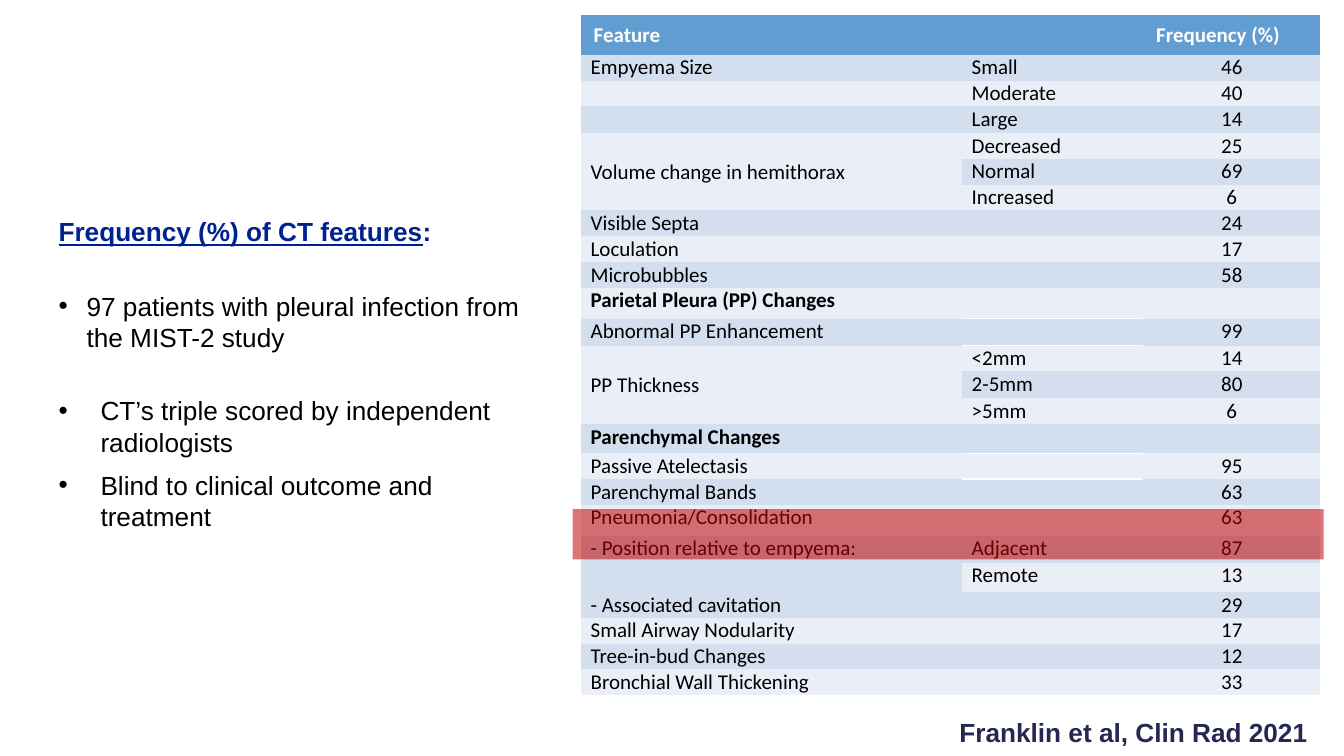
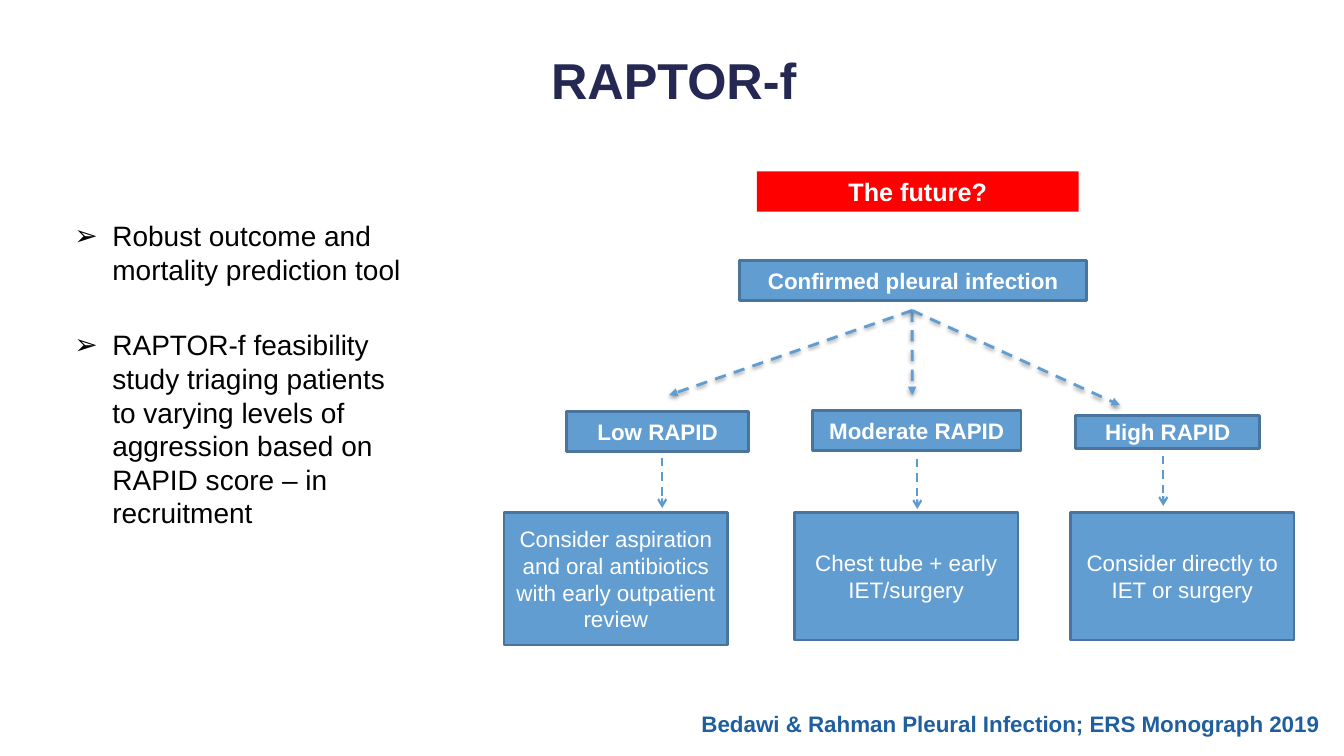
from dataclasses import dataclass

from lxml import etree
from pptx import Presentation
from pptx.dml.color import RGBColor
from pptx.enum.dml import MSO_LINE
from pptx.enum.shapes import MSO_CONNECTOR, MSO_SHAPE
from pptx.enum.text import MSO_ANCHOR, MSO_AUTO_SIZE, PP_ALIGN
from pptx.oxml.ns import qn
from pptx.util import Pt

LEFT, CENTER = PP_ALIGN.LEFT, PP_ALIGN.CENTER
TOP, MIDDLE = MSO_ANCHOR.TOP, MSO_ANCHOR.MIDDLE
RECTANGLE, STRAIGHT, DASH = MSO_SHAPE.RECTANGLE, MSO_CONNECTOR.STRAIGHT, MSO_LINE.DASH
TITLE_AND_CONTENT = 1
PLAIN_TABLE = "{2D5ABB26-0587-4C30-8999-92F81FD0307C}"


@dataclass(frozen=True)
class Theme:
    font: str = "Arial"
    table_font: str = "Calibri"
    black: str = "000000"
    white: str = "FFFFFF"
    navy: str = "242852"
    heading: str = "002190"
    citation: str = "1F5FA0"
    blue: str = "629DD1"
    edge: str = "49749B"
    thin_arrow: str = "5D9ACF"
    alert: str = "FF0000"
    highlight: str = "C00000"
    bands: tuple = ("EAEFF7", "D3DFEE")
    title: float = 36
    text: float = 20
    small_text: float = 18.7
    banner: float = 18
    box: float = 16
    table: float = 15


THEME = Theme()

# Feature, detail, frequency
FEATURES = [
    ("Feature", "", "Frequency (%)"),
    ("Empyema Size", "Small", "46"),
    ("", "Moderate", "40"),
    ("", "Large", "14"),
    ("Volume change in hemithorax", "Decreased", "25"),
    ("", "Normal", "69"),
    ("", "Increased", "6"),
    ("Visible Septa", "", "24"),
    ("Loculation", "", "17"),
    ("Microbubbles", "", "58"),
    ("Parietal Pleura (PP) Changes", "", ""),
    ("Abnormal PP Enhancement", "", "99"),
    ("PP Thickness", "<2mm", "14"),
    ("", "2-5mm", "80"),
    ("", ">5mm", "6"),
    ("Parenchymal Changes", "", ""),
    ("Passive Atelectasis", "", "95"),
    ("Parenchymal Bands", "", "63"),
    ("Pneumonia/Consolidation", "", "63"),
    ("- Position relative to empyema:", "Adjacent", "87"),
    ("", "Remote", "13"),
    ("- Associated cavitation", "", "29"),
    ("Small Airway Nodularity", "", "17"),
    ("Tree-in-bud Changes", "", "12"),
    ("Bronchial Wall Thickening", "", "33"),
]
ROW_HEIGHT = 18.4
TALL_ROWS = {0: 28, 3: 19.2, 10: 22.2, 11: 19.2, 13: 19.2,
             15: 20.9, 18: 22.2, 19: 19.2, 20: 20.9}
SECTION_ROWS = (10, 15)
ROW_SPANS = {4: 6, 12: 14, 19: 20}
MIDDLE_ROWS = (0, 4, 12)

# Risk label, its place, arrow tip, treatment, its place, start of the arrow to it
BRANCHES = [
    ("Low RAPID", (404.6, 293.8, 130.3, 28.8), (478, 282.2),
     "Consider aspiration and oral antibiotics with early outpatient review",
     (360, 365.8, 159.8, 95), (473, 326.9)),
    ("Moderate RAPID", (580.3, 293, 149, 28.8), (651.6, 282.2),
     "Chest tube + early IET/surgery",
     (567.4, 365.8, 159.8, 91.4), (655.2, 327.6)),
    ("High RAPID", (768.2, 296.6, 131.8, 23.8), (800, 289.4),
     "Consider directly to IET or surgery",
     (764.6, 365.8, 159.8, 91.4), (830.9, 325.4)),
]
FORK = (651.5, 221.8)
ARROW_LENGTH = 36


def child(parent, tag, **attributes):
    return etree.SubElement(parent, qn(tag), **attributes)


def color(value):
    return RGBColor.from_string(value)


def paint(target, value):
    target.fill.solid()
    target.fill.fore_color.rgb = color(value)


def write(paragraph, text, size=THEME.text, ink=THEME.black, bold=False,
          underline=None, align=LEFT, font=THEME.font):
    """Append a formatted span to the paragraph."""
    paragraph.alignment = align
    if not text:
        child(paragraph._p, "a:endParaRPr", sz=str(round(size * 100)))
        return
    span = paragraph.add_run()
    span.text = text
    span.font.name = font
    span.font.size = Pt(size)
    span.font.bold = bold
    span.font.underline = underline
    span.font.color.rgb = color(ink)


def bullet(paragraph, mark, hang):
    properties = paragraph._p.get_or_add_pPr()
    properties.set("marL", str(Pt(hang)))
    properties.set("indent", str(-Pt(hang)))
    child(properties, "a:buFont", typeface=THEME.font)
    child(properties, "a:buChar", char=mark)


class Deck:
    def __init__(self):
        self.presentation = Presentation()
        self.presentation.slide_width = Pt(960)
        self.presentation.slide_height = Pt(540)
        self.page = None

    def add_page(self):
        layout = self.presentation.slide_layouts[TITLE_AND_CONTENT]
        self.page = self.presentation.slides.add_slide(layout)

    def frame(self, box, anchor=TOP):
        """Prepare the text frame of a box and return it."""
        frame = box.text_frame
        frame.word_wrap = True
        frame.auto_size = MSO_AUTO_SIZE.NONE
        frame.vertical_anchor = anchor
        return frame

    def place(self, box, place):
        box.left, box.top, box.width, box.height = map(Pt, place)

    def title(self, place, spans, **style):
        """Fill the title with (text, underline) spans."""
        box = self.page.shapes.title
        self.place(box, place)
        paragraph = self.frame(box).paragraphs[0]
        for text, underline in spans:
            write(paragraph, text, bold=True, underline=underline, **style)

    def bullets(self, place, items, mark, size):
        """Fill the body with (text, space before, hanging indent) items."""
        box = self.page.placeholders[1]
        self.place(box, place)
        frame = self.frame(box)
        for index, (text, before, hang) in enumerate(items):
            paragraph = frame.add_paragraph() if index else frame.paragraphs[0]
            paragraph.space_before = Pt(before)
            bullet(paragraph, mark, hang)
            write(paragraph, text, size=size)

    def citation(self, place, text, **style):
        box = self.page.shapes.add_textbox(*map(Pt, place))
        write(self.frame(box).paragraphs[0], text, bold=True, **style)

    def box(self, place, text="", fill=THEME.blue, edge=None, anchor=MIDDLE,
            size=THEME.box, bold=False):
        box = self.page.shapes.add_shape(RECTANGLE, *map(Pt, place))
        box.shadow.inherit = False
        paint(box, fill)
        if edge:
            box.line.color.rgb = color(edge)
            box.line.width = Pt(2)
        else:
            box.line.fill.background()
        if text:
            write(self.frame(box, anchor).paragraphs[0], text, size=size,
                  ink=THEME.white, bold=bold, align=CENTER)
        return box

    def highlight(self, place, opacity):
        box = self.box(place, fill=THEME.highlight)
        tint = box._element.spPr.find(qn("a:solidFill"))[0]
        child(tint, "a:alpha", val=str(opacity * 1000))

    def arrow(self, start, end, ink, width, head, shadow=False):
        line = self.page.shapes.add_connector(STRAIGHT, *map(Pt, start + end))
        line.line.color.rgb = color(ink)
        line.line.width = Pt(width)
        line.line.dash_style = DASH
        properties = line._element.spPr
        child(properties.find(qn("a:ln")), "a:tailEnd", type=head)
        effects = child(properties, "a:effectLst")
        if shadow:
            cast = child(effects, "a:outerShdw", blurRad=str(Pt(3.1)),
                         dist=str(Pt(1.6)), dir="5400000", rotWithShape="0")
            shade = child(cast, "a:srgbClr", val=THEME.black)
            child(shade, "a:alpha", val="38000")

    def cell(self, cell, text, row, column):
        header = row == 0
        cell.margin_left = cell.margin_right = Pt(9.4 if header else 7.2)
        cell.margin_top = cell.margin_bottom = Pt(5 if header else 0)
        centred = row in MIDDLE_ROWS and (header or column == 0)
        cell.vertical_anchor = MIDDLE if centred else TOP
        write(cell.text_frame.paragraphs[0], text, size=THEME.table,
              font=THEME.table_font, ink=THEME.white if header else THEME.black,
              bold=header or row in SECTION_ROWS,
              align=CENTER if column == 2 and not header else LEFT)
        if column == 1 and row - 1 in SECTION_ROWS:
            border = child(cell._tc.get_or_add_tcPr(), "a:lnT", w=str(Pt(1)))
            child(child(border, "a:solidFill"), "a:srgbClr", val=THEME.white)
        paint(cell, THEME.blue if header else THEME.bands[row % 2])

    def feature_table(self, left, top, widths):
        heights = [TALL_ROWS.get(row, ROW_HEIGHT) for row in range(len(FEATURES))]
        holder = self.page.shapes.add_table(
            len(heights), len(widths), Pt(left), Pt(top), Pt(sum(widths)), Pt(sum(heights)))
        table = holder.table
        table.horz_banding = False
        next(holder._element.iter(qn("a:tableStyleId"))).text = PLAIN_TABLE
        for column, width in zip(table.columns, widths):
            column.width = Pt(width)
        for row, (values, height) in enumerate(zip(FEATURES, heights)):
            table.rows[row].height = Pt(height)
            for column, text in enumerate(values):
                self.cell(table.cell(row, column), text, row, column)
        for first, last in ROW_SPANS.items():
            table.cell(first, 0).merge(table.cell(last, 0))
        for row in SECTION_ROWS:
            table.cell(row, 0).merge(table.cell(row, 2))


def ct_features(deck):
    deck.add_page()
    deck.feature_table(414.7, 10.8, (272.2, 129.6, 126.7))
    deck.title((34.6, 150.5, 363, 32),
               [("Frequency (%) of CT features", True), (":", False)],
               size=THEME.small_text, ink=THEME.heading)
    deck.bullets((34.6, 203.4, 363, 200), [
        ("97 patients with pleural infection from the MIST-2 study", 0, 20),
        ("CT’s triple scored by independent radiologists", 30, 30),
        ("Blind to clinical outcome and treatment", 8.3, 30),
    ], "•", THEME.small_text)
    deck.citation((678.2, 508.3, 278, 30), "Franklin et al, Clin Rad 2021",
                  size=THEME.small_text, ink=THEME.navy)
    deck.highlight((409, 363.6, 536.4, 36), 54)


def raptor(deck):
    deck.add_page()
    deck.title((237.6, 31.7, 487.4, 51), [("RAPTOR-f", None)],
               size=THEME.title, ink=THEME.navy, align=CENTER)
    deck.bullets((46, 152.6, 257, 231), [
        ("Robust outcome and mortality prediction tool", 0, 27),
        ("RAPTOR-f feasibility study triaging patients to varying levels of "
         "aggression based on RAPID score – in recruitment", 30, 27),
    ], "➢", THEME.text)
    deck.box((540.7, 122.4, 229.7, 28.8), "The future?", fill=THEME.alert,
             anchor=TOP, size=THEME.banner, bold=True)
    deck.box((528.5, 185.8, 247.7, 28.8), "Confirmed pleural infection",
             edge=THEME.edge, bold=True)
    for risk, risk_place, tip, treatment, treatment_place, start in BRANCHES:
        deck.arrow(FORK, tip, THEME.blue, 2, "triangle", shadow=True)
        deck.box(risk_place, risk, edge=THEME.edge, bold=True)
        deck.box(treatment_place, treatment, edge=THEME.edge)
        end = (start[0], start[1] + ARROW_LENGTH)
        deck.arrow(start, end, THEME.thin_arrow, 1.5, "arrow")
    deck.citation((494, 504, 460, 27),
                  "Bedawi & Rahman Pleural Infection; ERS Monograph 2019",
                  size=THEME.box, ink=THEME.citation)


def main():
    deck = Deck()
    ct_features(deck)
    raptor(deck)
    deck.presentation.save("out.pptx")


if __name__ == "__main__":
    main()
